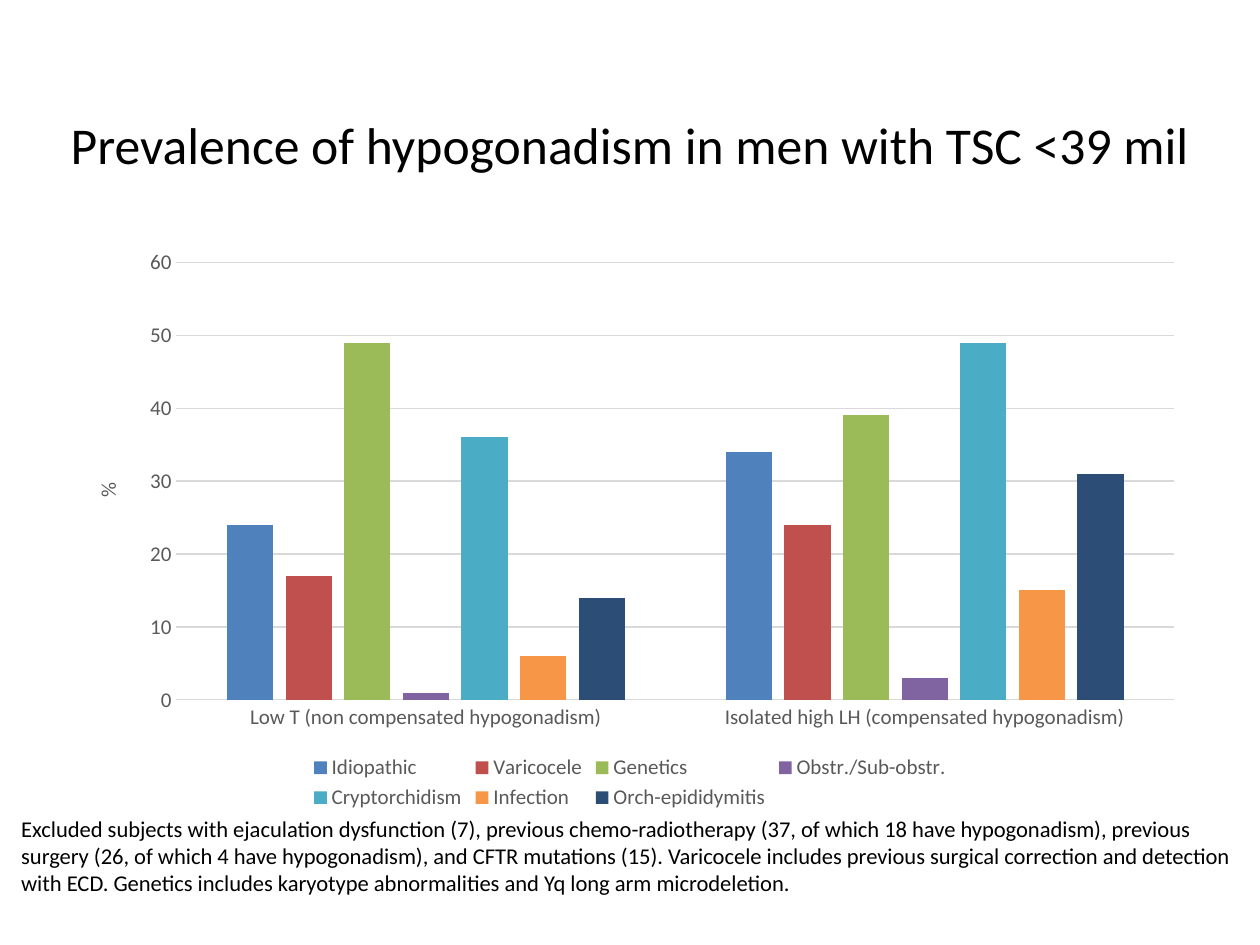
from dataclasses import dataclass

import lxml.etree
import pptx
import pptx.chart.data
import pptx.dml.color
import pptx.enum.chart
import pptx.enum.text
import pptx.oxml
import pptx.oxml.ns
import pptx.util
from pptx.util import Inches


@dataclass(frozen=True)
class Theme:
    """Colours, font and type sizes of the slide."""
    font: str = "Calibri"
    text: str = "000000"
    label: str = "595959"
    rule: str = "D9D9D9"
    title_size: float = 29.5
    note_size: float = 12.9
    chart_size: float = 12
    rule_width: float = 0.75


THEME = Theme()
CATEGORIES = (
    "Low T (non compensated hypogonadism)",
    "Isolated high LH (compensated hypogonadism)",
)
SERIES = (
    ("Idiopathic", (24, 34), "4F81BD"),
    ("Varicocele", (17, 24), "C0504D"),
    ("Genetics", (49, 39), "9BBB59"),
    ("Obstr./Sub-obstr.", (1, 3), "8064A2"),
    ("Cryptorchidism", (36, 49), "4BACC6"),
    ("Infection", (6, 15), "F79646"),
    ("Orch-epididymitis", (14, 31), "2C4D75"),
)
PLOT_AREA = {"x": 0.1, "y": 0.04, "w": 0.88, "h": 0.76}
TITLE = "Prevalence of hypogonadism in men with TSC <39 mil"
NOTE = (
    "Excluded subjects with ejaculation dysfunction (7), previous chemo-radiotherapy "
    "(37, of which 18 have hypogonadism), previous surgery (26, of which 4 have "
    "hypogonadism), and CFTR mutations (15). Varicocele includes previous surgical "
    "correction and detection with ECD. Genetics includes karyotype abnormalities "
    "and Yq long arm microdeletion."
)


def rgb(value):
    """Return the colour for a hex string."""
    return pptx.dml.color.RGBColor.from_string(value)


def style_font(font, size, color):
    """Apply the theme font with a size and colour."""
    font.name = THEME.font
    font.size = pptx.util.Pt(size)
    font.bold = False
    font.color.rgb = rgb(color)


def style_rule(line):
    """Draw a line as a thin chart rule."""
    line.color.rgb = rgb(THEME.rule)
    line.width = pptx.util.Pt(THEME.rule_width)


def add_text(slide, box, text, size, alignment, anchor):
    """Add a wrapped text box with one paragraph."""
    shape = slide.shapes.add_textbox(*map(Inches, box))
    text_frame = shape.text_frame
    text_frame.word_wrap = True
    text_frame.vertical_anchor = anchor
    text_frame.text = text
    paragraph = text_frame.paragraphs[0]
    paragraph.alignment = alignment
    style_font(paragraph.runs[0].font, size, THEME.text)


def place_plot_area(chart):
    """Fix the inner plot area as fractions of the chart."""
    qn = pptx.oxml.ns.qn
    plot_area = chart.element.find(".//" + qn("c:plotArea"))
    for layout in plot_area.findall(qn("c:layout")):
        plot_area.remove(layout)
    layout = lxml.etree.Element(qn("c:layout"))
    manual = lxml.etree.SubElement(layout, qn("c:manualLayout"))
    settings = {"layoutTarget": "inner", "xMode": "edge", "yMode": "edge", **PLOT_AREA}
    for name, value in settings.items():
        lxml.etree.SubElement(manual, qn(f"c:{name}")).set("val", str(value))
    plot_area.insert(0, layout)


def style_axes(chart):
    """Format both axes, the gridlines and the axis title."""
    for axis in (chart.category_axis, chart.value_axis):
        axis.major_tick_mark = pptx.enum.chart.XL_TICK_MARK.NONE
        axis.minor_tick_mark = pptx.enum.chart.XL_TICK_MARK.NONE
        style_font(axis.tick_labels.font, THEME.chart_size, THEME.label)
    style_rule(chart.category_axis.format.line)
    value_axis = chart.value_axis
    value_axis.minimum_scale = 0
    value_axis.maximum_scale = 60
    value_axis.major_unit = 10
    value_axis.format.line.fill.background()
    style_rule(value_axis.major_gridlines.format.line)
    text_frame = value_axis.axis_title.text_frame
    text_frame.text = "%"
    style_font(text_frame.paragraphs[0].runs[0].font, THEME.chart_size, THEME.label)


def add_column_chart(slide, box):
    """Add the clustered column chart with its legend."""
    data = pptx.chart.data.CategoryChartData()
    data.categories = CATEGORIES
    for name, values, _ in SERIES:
        data.add_series(name, values)
    chart = slide.shapes.add_chart(
        pptx.enum.chart.XL_CHART_TYPE.COLUMN_CLUSTERED, *map(Inches, box), data
    ).chart
    style_font(chart.font, THEME.chart_size, THEME.label)
    chart.has_title = False
    chart.has_legend = True
    chart.legend.position = pptx.enum.chart.XL_LEGEND_POSITION.BOTTOM
    chart.legend.include_in_layout = False
    style_font(chart.legend.font, THEME.chart_size, THEME.label)
    plot = chart.plots[0]
    plot.vary_by_categories = False
    plot.gap_width = 219
    plot.overlap = -27
    for series, (_, _, color) in zip(plot.series, SERIES):
        series.format.fill.solid()
        series.format.fill.fore_color.rgb = rgb(color)
    style_axes(chart)
    place_plot_area(chart)


def main():
    """Build and save the slide."""
    presentation = pptx.Presentation()
    presentation.slide_width = Inches(10)
    presentation.slide_height = Inches(7.5)
    slide = presentation.slides.add_slide(presentation.slide_layouts[6])
    align = pptx.enum.text.PP_ALIGN
    anchor = pptx.enum.text.MSO_ANCHOR
    add_text(slide, (0.2, 0.57, 9.6, 1.15), TITLE, THEME.title_size, align.CENTER, anchor.MIDDLE)
    add_column_chart(slide, (0.5, 1.9, 9, 4.57))
    add_text(slide, (0.07, 6.42, 9.87, 0.75), NOTE, THEME.note_size, align.LEFT, anchor.TOP)
    presentation.save("out.pptx")


if __name__ == "__main__":
    main()
